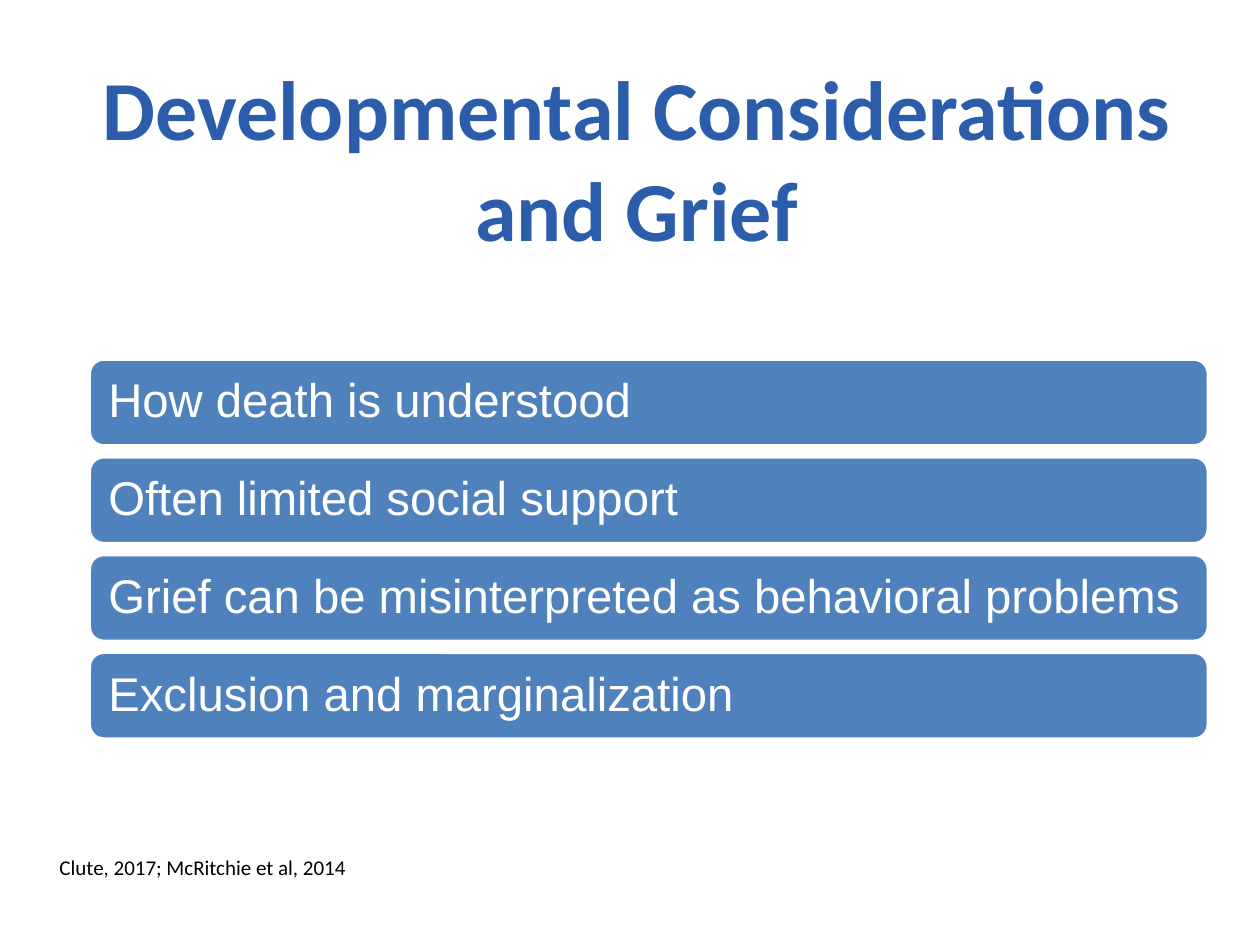
import dataclasses

import pptx
import pptx.dml.color
import pptx.enum.shapes
import pptx.enum.text
import pptx.util

Cm = pptx.util.Cm
Pt = pptx.util.Pt
ALIGN = pptx.enum.text.PP_ALIGN
ANCHOR = pptx.enum.text.MSO_ANCHOR

COLORS = {"title": "2B5DAA", "bar": "4F81BD", "white": "FFFFFF", "black": "000000"}

BAR_LEFT, BAR_TOP, BAR_WIDTH, BAR_HEIGHT = 1.8, 7.24, 22.56, 1.75
BAR_PITCH = 1.97
CONSIDERATIONS = [
    "How death is understood",
    "Often limited social support",
    "Grief can be misinterpreted as behavioral problems",
    "Exclusion and marginalization",
]


@dataclasses.dataclass
class Label:
    text: str
    size: float
    color: str
    font: str = "Calibri"
    bold: bool = False
    align: ALIGN = ALIGN.LEFT
    anchor: ANCHOR = ANCHOR.TOP
    line_spacing: float = 1.0
    inset_x: float = 0.13
    inset_y: float = 0.13


def rgb(name: str) -> pptx.dml.color.RGBColor:
    return pptx.dml.color.RGBColor.from_string(COLORS[name])


def write(sp, label: Label) -> None:
    tf = sp.text_frame
    tf.word_wrap = True
    tf.vertical_anchor = label.anchor
    tf.margin_left = tf.margin_right = Cm(label.inset_x)
    tf.margin_top = tf.margin_bottom = Cm(label.inset_y)
    p = tf.paragraphs[0]
    p.alignment = label.align
    p.line_spacing = label.line_spacing
    r = p.add_run()
    r.text = label.text
    r.font.name = label.font
    r.font.size = Pt(label.size)
    r.font.bold = label.bold
    r.font.color.rgb = rgb(label.color)


def add_text(s, left: float, top: float, width: float, height: float, label: Label) -> None:
    write(s.shapes.add_textbox(Cm(left), Cm(top), Cm(width), Cm(height)), label)


def add_bar(s, index: int, text: str) -> None:
    sp = s.shapes.add_shape(
        pptx.enum.shapes.MSO_SHAPE.ROUNDED_RECTANGLE,
        Cm(BAR_LEFT), Cm(BAR_TOP + index * BAR_PITCH), Cm(BAR_WIDTH), Cm(BAR_HEIGHT),
    )
    sp.shadow.inherit = False
    sp.fill.solid()
    sp.fill.fore_color.rgb = rgb("bar")
    sp.line.color.rgb = rgb("white")
    sp.line.width = Pt(2)
    write(sp, Label(text, 27, "white", font="Arial", anchor=ANCHOR.MIDDLE,
                    line_spacing=0.9, inset_x=0.3, inset_y=0.28))


def main() -> None:
    prs = pptx.Presentation()
    prs.slide_width, prs.slide_height = Cm(25.4), Cm(19.05)
    s = prs.slides.add_slide(prs.slide_layouts[6])

    # Title
    add_text(s, 1.32, 1.02, 23.04, 4.85,
             Label("Developmental Considerations and Grief", 48, "title",
                   bold=True, align=ALIGN.CENTER))

    # Citation
    add_text(s, 1.07, 17.09, 17.17, 0.76,
             Label("Clute, 2017; McRitchie et al, 2014", 12, "black"))

    # Stack of considerations
    for i, text in enumerate(CONSIDERATIONS):
        add_bar(s, i, text)

    prs.save("out.pptx")


if __name__ == "__main__":
    main()
